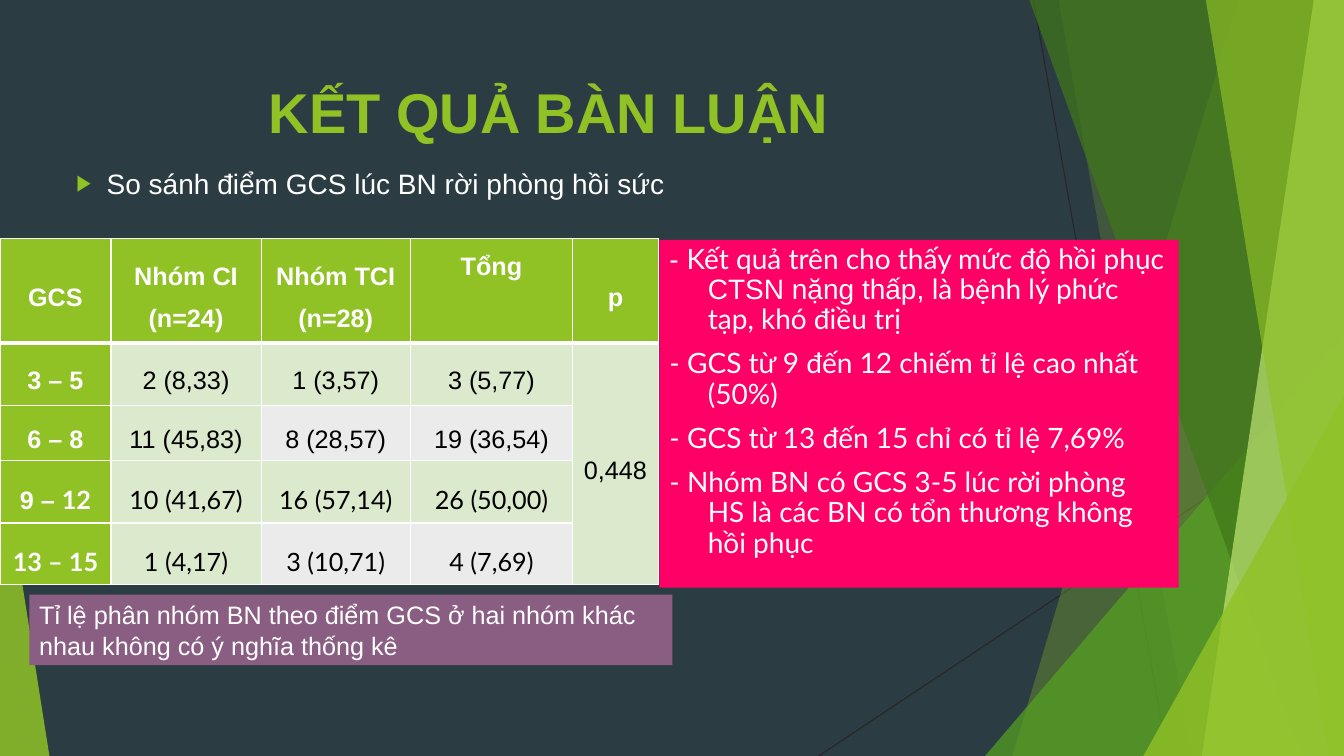
"""Build the slide that compares GCS scores of the two patient groups."""
from lxml.etree import SubElement
from pptx import Presentation
from pptx.dml.color import RGBColor
from pptx.enum.shapes import MSO_CONNECTOR, MSO_SHAPE
from pptx.enum.text import MSO_ANCHOR, MSO_AUTO_SIZE, PP_ALIGN
from pptx.oxml import parse_xml
from pptx.oxml.ns import nsdecls, qn
from pptx.util import Inches, Pt

WIDE, HIGH = 13.33, 7.5
GREEN, WHITE, BLACK = "90C226", "FFFFFF", "000000"
MINT, GREY = "DBE9CD", "EBEBEB"

TITLE = "KẾT QUẢ BÀN LUẬN"
TOPIC = "So sánh điểm GCS lúc BN rời phòng hồi sức"
NOTE = "Tỉ lệ phân nhóm BN theo điểm GCS ở hai nhóm khác nhau không có ý nghĩa thống kê"
POINTS = [
    [("- ", "Arial"), ("Kết quả trên cho thấy mức độ hồi phục", "Lato"),
     (" CTSN nặng thấp,", "Arial"), (" là bệnh lý phức tạp, khó điều trị", "Lato")],
    [("- GCS từ 9 đến 12 chiếm tỉ lệ cao nhất (50%)", "Lato")],
    [("- GCS từ 13 đến 15 chỉ có tỉ lệ 7,69%", "Lato")],
    [("- Nhóm BN có GCS 3-5 lúc rời phòng HS là các BN có tổn thương không hồi phục", "Lato")],
]
ROWS = [
    ["GCS", "Nhóm CI (n=24)", "Nhóm TCI (n=28)", "Tổng", "p"],
    ["3 – 5", "2 (8,33)", "1 (3,57)", "3 (5,77)", "0,448"],
    ["6 – 8", "11 (45,83)", "8 (28,57)", "19 (36,54)", ""],
    [[("9 – ", "Arial"), ("12", "Lato")], "10 (41,67)", "16 (57,14)", "26 (50,00)", ""],
    ["13 – 15", "1 (4,17)", "3 (10,71)", "4 (7,69)", ""],
]
WIDTHS = [1.1, 1.49, 1.48, 1.61, 0.85]
HEIGHTS = [1.03, 0.62, 0.55, 0.62, 0.61]

LINES = [(10.25, 0, 11.58, HIGH), (WIDE, 4.03, 8.12, HIGH)]
BANDS = [
    ("band", 12.28, 10.04, GREEN, 30),
    ("band", 10.5, 11.82, GREEN, 20),
    ("peak", (9.77, 3.33, 3.56, 4.17), 1, "54A021", 72),
    ("band", 10.21, 12.91, "3F7819", 70),
    ("band", 13.03, 11.92, "C0E474", 70),
    ("band", 11.96, 13.18, GREEN, 65),
    ("peak", (11.34, 3.93, 1.99, 3.57), 1, GREEN, 80),
    ("peak", (0, 4.39, 0.49, 3.11), 0, GREEN, 85),
]


def paint(fill, color):
    fill.solid()
    fill.fore_color.rgb = RGBColor.from_string(color)


def place(shape, *box):
    shape.left, shape.top, shape.width, shape.height = map(Inches, box)


def write(par, text, size, color=WHITE, bold=False, font="Arial"):
    for part, face in [(text, font)] if isinstance(text, str) else text:
        run = par.add_run()
        run.text = part
        run.font.name, run.font.size, run.font.bold = face, Pt(size), bold
        paint(run.font.fill, color)


def indent(par, size, mark=None):
    props = par._p.get_or_add_pPr()
    props.set("marL", str(Inches(size)))
    props.set("indent", str(-Inches(size)))
    if mark:
        tint = SubElement(props, qn("a:buClr"))
        SubElement(tint, qn("a:srgbClr"), val=GREEN)
        SubElement(props, qn("a:buSzPct"), val="80000")
        SubElement(props, qn("a:buFont"), typeface="Arial")
        SubElement(props, qn("a:buChar"), char=mark)
    else:
        SubElement(props, qn("a:buNone"))


def draw_back(shapes):
    for line in LINES:
        link = shapes.add_connector(MSO_CONNECTOR.STRAIGHT, *map(Inches, line))
        link.line.width = Pt(0.75)
        paint(link.line.fill, "262626")
        SubElement(link._element.spPr, qn("a:effectLst"))
    for kind, first, second, color, alpha in BANDS:
        if kind == "band":
            points = [(WIDE, 0), (WIDE, HIGH), (second, HIGH)]
            path = shapes.build_freeform(Inches(first), 0)
            path.add_line_segments([tuple(map(Inches, spot)) for spot in points])
            shape = path.convert_to_shape()
        else:
            shape = shapes.add_shape(MSO_SHAPE.ISOSCELES_TRIANGLE, *map(Inches, first))
            shape.adjustments[0] = second
        paint(shape.fill, color)
        tint = shape._element.spPr.find(qn("a:solidFill"))[0]
        SubElement(tint, qn("a:alpha"), val=str(alpha * 1000))
        shape.line.fill.background()
        shape.shadow.inherit = False


def edge(cell, row):
    props = cell._tc.get_or_add_tcPr()
    for spot, side in enumerate("LRTB"):
        thick = (row, side) in [(0, "B"), (1, "T")]
        props.insert(spot, parse_xml(
            f'<a:ln{side} {nsdecls("a")} w="{Pt(3 if thick else 1)}"><a:solidFill>'
            f'<a:srgbClr val="{WHITE}"/></a:solidFill></a:ln{side}>'))


def draw_table(shapes):
    box = map(Inches, (0, 2.37, sum(WIDTHS), sum(HEIGHTS)))
    table = shapes.add_table(len(ROWS), len(WIDTHS), *box).table
    for col, width in zip(table.columns, WIDTHS):
        col.width = Inches(width)
    for row, height in zip(table.rows, HEIGHTS):
        row.height = Inches(height)
    for r, row in enumerate(ROWS):
        for c, text in enumerate(row):
            cell = table.cell(r, c)
            head = r == 0 or c == 0
            pale = GREY if r in (2, 4) and c in (2, 3) else MINT
            paint(cell.fill, GREEN if head else pale)
            edge(cell, r)
            cell.margin_left = cell.margin_right = Inches(0.07)
            cell.margin_top = cell.margin_bottom = 0
            cell.vertical_anchor = MSO_ANCHOR.TOP if (r, c) == (0, 3) else MSO_ANCHOR.MIDDLE
            par = cell.text_frame.paragraphs[0]
            par.alignment, par.line_spacing = PP_ALIGN.CENTER, 1.5
            if text:
                write(par, text, 18, WHITE if head else BLACK, head,
                      "Lato" if r > 2 else "Arial")
    table.cell(1, 4).merge(table.cell(4, 4))


def main():
    deck = Presentation()
    deck.slide_width, deck.slide_height = Inches(WIDE), Inches(HIGH)
    slide = deck.slides.add_slide(deck.slide_layouts[1])
    paint(slide.background.fill, "2C3C43")
    shapes = slide.shapes
    title, body = shapes.title, slide.placeholders[1]
    draw_back(shapes)
    for holder in (title, body):
        shapes._spTree.append(holder._element)

    place(title, 0.74, 0.67, 9.4, 0.87)
    par = title.text_frame.paragraphs[0]
    par.alignment = PP_ALIGN.CENTER
    write(par, TITLE, 40, GREEN, True)

    place(body, 6.54, 2.38, 5.15, 3.45)
    paint(body.fill, "FF0066")
    frame = body.text_frame
    frame.auto_size = MSO_AUTO_SIZE.NONE
    for num, point in enumerate(POINTS):
        par = frame.add_paragraph() if num else frame.paragraphs[0]
        par.line_spacing, par.space_before = 0.9, Pt(10)
        indent(par, 0.38)
        write(par, point, 20)

    draw_table(shapes)

    topic = shapes.add_textbox(*map(Inches, (0.66, 1.6, 9.23, 0.43)))
    topic.text_frame.word_wrap = True
    par = topic.text_frame.paragraphs[0]
    indent(par, 0.3, "▶")
    write(par, TOPIC, 20)

    note = shapes.add_shape(MSO_SHAPE.RECTANGLE, *map(Inches, (0.29, 5.9, 6.38, 0.7)))
    paint(note.fill, "8A5E82")
    note.line.fill.background()
    note.shadow.inherit = False
    par = note.text_frame.paragraphs[0]
    par.alignment = PP_ALIGN.LEFT
    write(par, NOTE, 18)
    deck.save("out.pptx")


if __name__ == "__main__":
    main()
